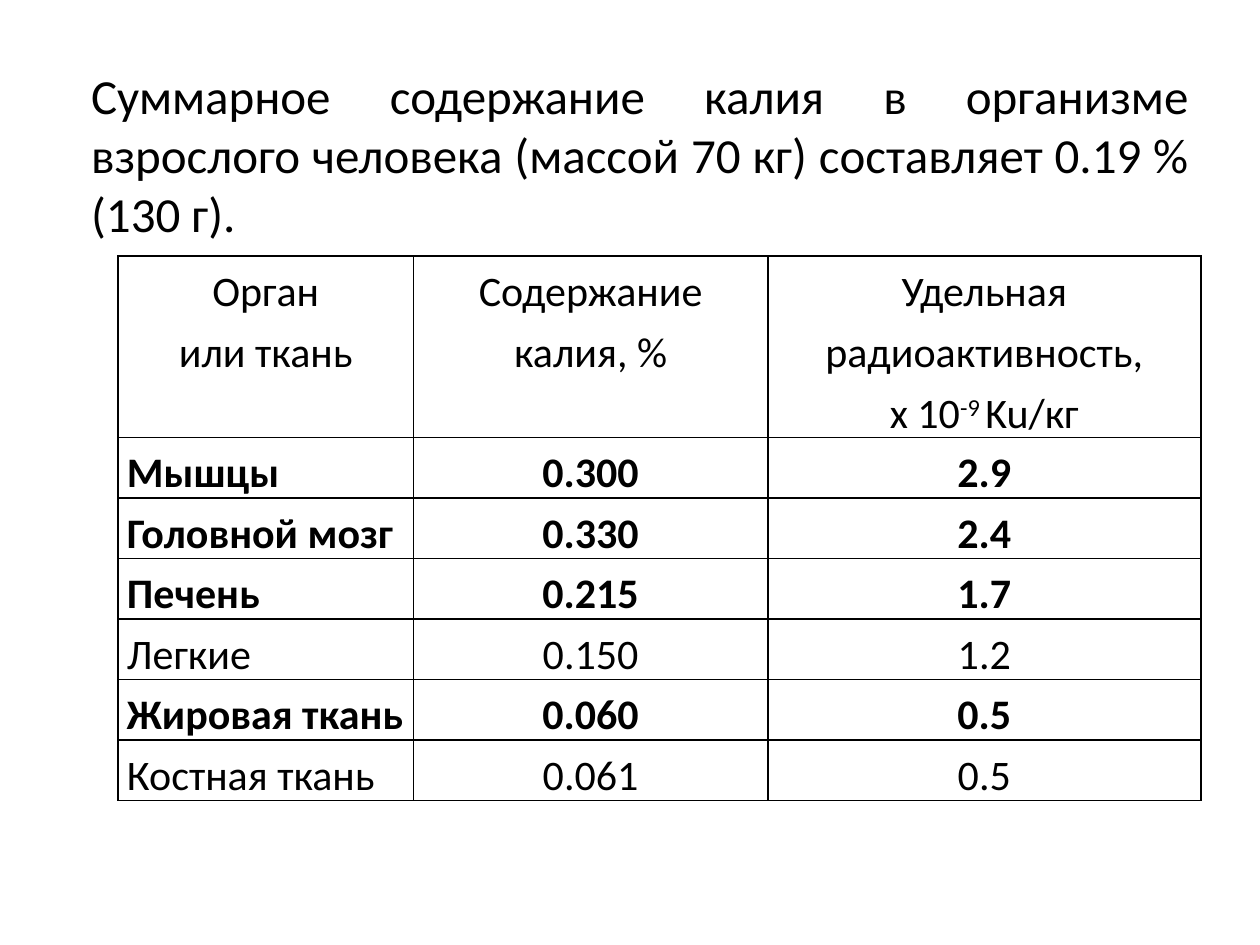
import pptx
import pptx.dml.color
import pptx.enum.text
import pptx.oxml
import pptx.oxml.ns
import pptx.util

Pt = pptx.util.Pt
ALIGN = pptx.enum.text.PP_ALIGN
ANCHOR = pptx.enum.text.MSO_ANCHOR
COLORS = {"text": "000000", "border": "000000"}

TITLE = ("Суммарное содержание калия в организме взрослого человека "
         "(массой 70 кг) составляет 0.19 % (130 г).")

# A cell is a list of paragraphs; a paragraph is a list of (text, superscript) runs
HEADER = [
    [[("Орган", False)], [("или ткань", False)]],
    [[("Содержание", False)], [("калия, %", False)]],
    [[("Удельная радиоактивность,", False)],
     [("х 10", False), ("-9 ", True), ("Ku/кг", False)]],
]
# Organ, potassium content, specific radioactivity, bold row
TISSUES = [
    ("Мышцы", "0.300", "2.9", True),
    ("Головной мозг", "0.330", "2.4", True),
    ("Печень", "0.215", "1.7", True),
    ("Легкие", "0.150", "1.2", False),
    ("Жировая ткань", "0.060", "0.5", True),
    ("Костная ткань", "0.061", "0.5", False),
]


def add_run(p, text, font="Calibri", size=24, bold=False, color="text", superscript=False):
    r = p.add_run()
    r.text = text
    r.font.name = font
    r.font.size = Pt(size)
    r.font.bold = bold
    r.font.color.rgb = pptx.dml.color.RGBColor.from_string(COLORS[color])
    if superscript:
        r.font._element.set("baseline", "30000")


class SlideBuilder:
    """Holds the slide and the style shared by its elements."""
    title_size = 28
    cell_size = 24
    cell_inset = 5.1
    line_spacing = 1.2
    border_width = 1

    def __init__(self, slide):
        self.s = slide

    def text(self, text, left, top, width, height):
        tf = self.s.shapes.add_textbox(Pt(left), Pt(top), Pt(width), Pt(height)).text_frame
        tf.word_wrap = True
        tf.auto_size = pptx.enum.text.MSO_AUTO_SIZE.SHAPE_TO_FIT_TEXT
        p = tf.paragraphs[0]
        p.alignment = ALIGN.JUSTIFY
        add_run(p, text, size=self.title_size)

    def table(self, left, top, col_widths, row_heights):
        frame = self.s.shapes.add_table(
            len(row_heights), len(col_widths), Pt(left), Pt(top),
            Pt(sum(col_widths)), Pt(sum(row_heights)))
        table = frame.table
        table.first_row = table.horz_banding = False
        for col, width in zip(table.columns, col_widths):
            col.width = Pt(width)
        for row, height in zip(table.rows, row_heights):
            row.height = Pt(height)
        return table

    def cell(self, cell, paragraphs, align=ALIGN.CENTER, anchor=ANCHOR.MIDDLE, bold=False):
        cell.margin_left = cell.margin_right = Pt(self.cell_inset)
        cell.margin_top = cell.margin_bottom = 0
        cell.vertical_anchor = anchor
        self.borders(cell)
        cell.fill.background()
        tf = cell.text_frame
        for i, runs in enumerate(paragraphs):
            p = tf.add_paragraph() if i else tf.paragraphs[0]
            p.alignment = align
            p.line_spacing = self.line_spacing
            for text, superscript in runs:
                add_run(p, text, size=self.cell_size, bold=bold, superscript=superscript)

    def borders(self, cell):
        tc_pr = cell._tc.get_or_add_tcPr()
        for side in "LRTB":
            tc_pr.append(pptx.oxml.parse_xml(
                f'<a:ln{side} {pptx.oxml.ns.nsdecls("a")} w="{Pt(self.border_width)}">'
                f'<a:solidFill><a:srgbClr val="{COLORS["border"]}"/></a:solidFill>'
                f'</a:ln{side}>'))


def main():
    prs = pptx.Presentation()
    prs.slide_width, prs.slide_height = Pt(720), Pt(540)
    b = SlideBuilder(prs.slides.add_slide(prs.slide_layouts[6]))

    # Opening statement
    b.text(TITLE, 45, 34, 641.25, 108.5)

    # Potassium table
    table = b.table(67.5, 146.25, [168.75, 202.5, 247.5], [103.5] + [34.5] * len(TISSUES))
    for col, paragraphs in enumerate(HEADER):
        b.cell(table.cell(0, col), paragraphs, anchor=ANCHOR.TOP)
    for row, (*values, bold) in enumerate(TISSUES, start=1):
        for col, value in enumerate(values):
            b.cell(table.cell(row, col), [[(value, False)]], bold=bold,
                   align=ALIGN.CENTER if col else ALIGN.LEFT)

    prs.save("out.pptx")


if __name__ == "__main__":
    main()
